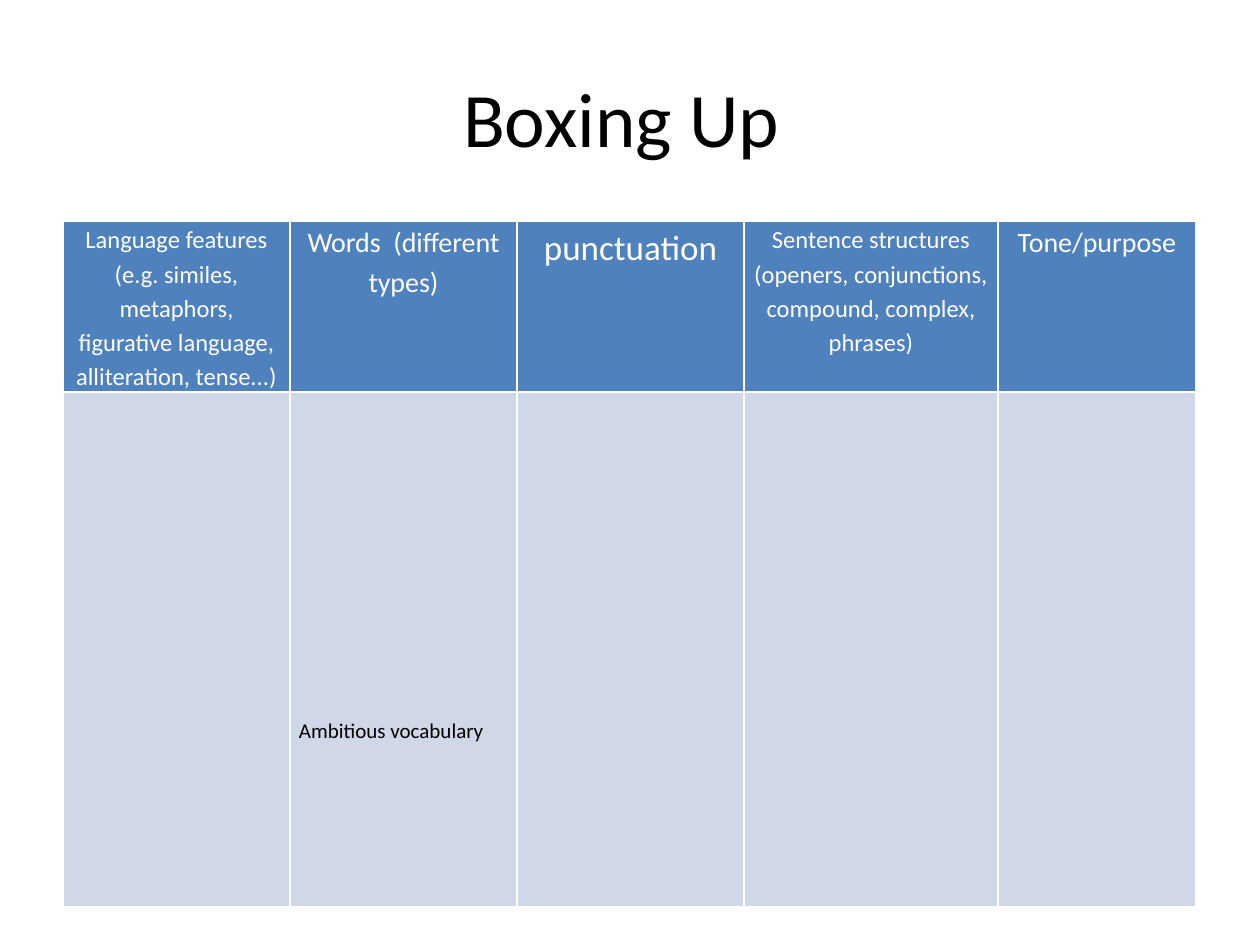
from lxml.etree import SubElement
from pptx import Presentation
from pptx.dml.color import RGBColor
from pptx.enum.text import MSO_ANCHOR, PP_ALIGN
from pptx.oxml.ns import qn
from pptx.util import Pt

FONT = "Calibri"
COLORS = {"text": "000000", "header": "4F81BD", "body": "D0D8E8", "white": "FFFFFF"}
COL_WIDTHS = [227, 227, 227, 254, 198]
ROW_HEIGHTS = [171, 515]
HEADERS = [
    (["Language features",
      "(e.g. similes, metaphors, figurative language, alliteration, tense...)"], 14),
    (["Words  (different types)"], 16),
    (["punctuation"], 20),
    (["Sentence structures", "(openers, conjunctions, compound, complex, phrases)"], 14),
    (["Tone/purpose"], 16),
]
WORDS_COLUMN = 1


def px(n):
    """Convert pixels at 126 to the inch into EMU."""
    return round(n * 914400 / 126)


def write(tf, lines, size, color, align, spacing=None):
    """Write lines as paragraphs of one style."""
    for i, line in enumerate(lines):
        p = tf.add_paragraph() if i else tf.paragraphs[0]
        p.text = line
        p.alignment = align
        p.line_spacing = spacing
        p.font.name = FONT
        p.font.size = Pt(size)
        p.font.color.rgb = RGBColor.from_string(COLORS[color])


def style_cell(cell, fill):
    """Give a cell thin white borders, narrow margins and a fill."""
    tcPr = cell._tc.get_or_add_tcPr()
    for side in "LRTB":
        ln = SubElement(tcPr, qn(f"a:ln{side}"), w=str(Pt(1)))
        solid = SubElement(ln, qn("a:solidFill"))
        SubElement(solid, qn("a:srgbClr"), val=COLORS["white"])
    cell.fill.solid()
    cell.fill.fore_color.rgb = RGBColor.from_string(COLORS[fill])
    cell.margin_left = cell.margin_right = px(9)
    cell.margin_top = cell.margin_bottom = 0


def add_title(s, x, y, w, h):
    """Place the centred slide title."""
    tf = s.shapes.add_textbox(px(x), px(y), px(w), px(h)).text_frame
    tf.word_wrap = True
    tf.vertical_anchor = MSO_ANCHOR.MIDDLE
    write(tf, ["Boxing Up "], 44, "text", PP_ALIGN.CENTER)


def add_boxing_table(s, x, y):
    """Place the planning table with its headers and vocabulary prompt."""
    frame = s.shapes.add_table(len(ROW_HEIGHTS), len(COL_WIDTHS), px(x), px(y),
                               px(sum(COL_WIDTHS)), px(sum(ROW_HEIGHTS)))
    table = frame.table
    for row, height in zip(table.rows, ROW_HEIGHTS):
        row.height = px(height)
    for i, (width, (lines, size)) in enumerate(zip(COL_WIDTHS, HEADERS)):
        table.columns[i].width = px(width)
        head = table.cell(0, i)
        style_cell(head, "header")
        style_cell(table.cell(1, i), "body")
        write(head.text_frame, lines, size, "white", PP_ALIGN.CENTER, 1.15)
        for p in head.text_frame.paragraphs:
            p.font.bold = False
    prompt = table.cell(1, WORDS_COLUMN)
    prompt.margin_top = px(323)
    write(prompt.text_frame, ["Ambitious vocabulary"], 12, "text", PP_ALIGN.LEFT, 1.15)


def main():
    """Build and save the slide."""
    prs = Presentation()
    prs.slide_width, prs.slide_height = px(1260), px(945)
    s = prs.slides.add_slide(prs.slide_layouts[6])
    add_title(s, 63, 38, 1134, 158)
    add_boxing_table(s, 63, 221)
    prs.save("out.pptx")


if __name__ == "__main__":
    main()
